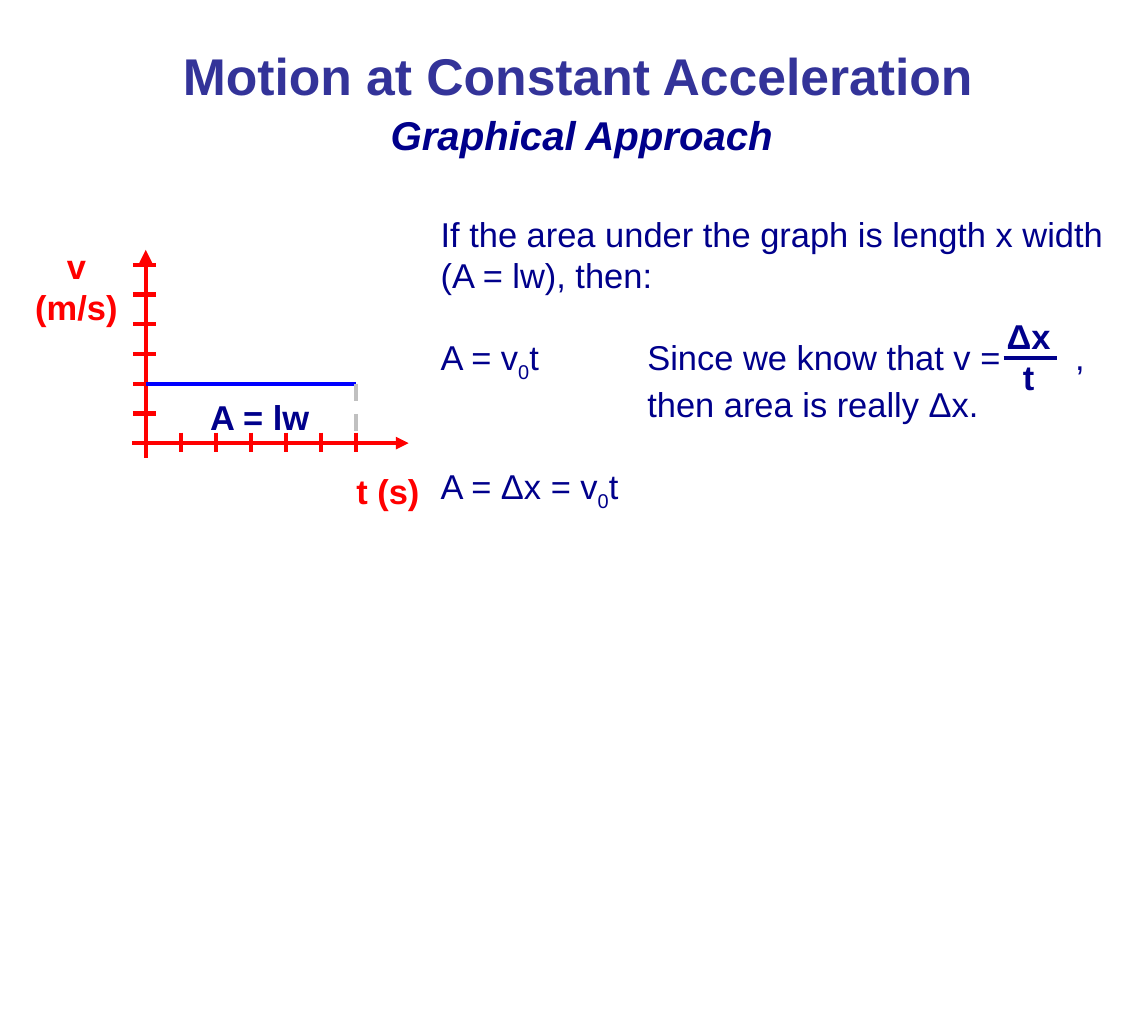
from lxml.etree import SubElement
from pptx import Presentation
from pptx.dml.color import RGBColor
from pptx.enum.dml import MSO_LINE
from pptx.enum.shapes import MSO_CONNECTOR
from pptx.enum.text import PP_ALIGN
from pptx.oxml.ns import qn
from pptx.util import Inches, Pt

INDIGO = RGBColor(0x33, 0x33, 0x99)
NAVY = RGBColor(0x00, 0x00, 0x8B)
RED = RGBColor(0xFF, 0x00, 0x00)
BLUE = RGBColor(0x00, 0x00, 0xFF)
SILVER = RGBColor(0xC0, 0xC0, 0xC0)

WIDTH, HEIGHT = Inches(11.11), Inches(10)
BLANK_LINE = 28.5


def area(left, top, width, height):
    """Turn hundredths of the slide's size into a box."""
    return (left * WIDTH / 100, top * HEIGHT / 100,
            width * WIDTH / 100, height * HEIGHT / 100)


def add_text(slide, box, *lines, size=24, color=NAVY, bold=False, italic=False,
             align=PP_ALIGN.LEFT, wrap=True, tabs=(), gaps=()):
    """Write one paragraph a line; underscores enclose a subscript.

    A line whose index is in gaps has an empty line's space above it.
    """
    frame = slide.shapes.add_textbox(*map(round, box)).text_frame
    frame.word_wrap = wrap
    for index, line in enumerate(lines):
        paragraph = frame.add_paragraph() if index else frame.paragraphs[0]
        paragraph.alignment = align
        if index in gaps:
            paragraph.space_before = Pt(BLANK_LINE)
        if tabs:
            stops = SubElement(paragraph._p.get_or_add_pPr(), qn("a:tabLst"))
            for stop in tabs:
                SubElement(stops, qn("a:tab"), pos=str(stop), algn="l")
        for part, words in enumerate(line.split("_")):
            run = paragraph.add_run()
            run.text = words
            font = run.font
            font.name, font.size = "Arial", Pt(size)
            font.bold, font.italic = bold, italic
            font.color.rgb = color
            if part % 2:
                run._r.get_or_add_rPr().set("baseline", "-25000")


def add_line(slide, start, end, color, dash=None, arrow=False):
    line = slide.shapes.add_connector(
        MSO_CONNECTOR.STRAIGHT, *map(round, (*start, *end)))
    line.line.color.rgb = color
    line.line.width = Pt(3)
    if dash:
        line.line.dash_style = dash
    if arrow:
        SubElement(line.line._get_or_add_ln(), qn("a:tailEnd"), type="triangle")
    SubElement(line._element.spPr, qn("a:effectLst"))


def add_heading(slide, box):
    left, top, width, height = box
    add_text(slide, (left, top, width, height * 0.6),
             "Motion at Constant Acceleration",
             size=36, color=INDIGO, bold=True, align=PP_ALIGN.CENTER)
    add_text(slide, (left + width * 0.28, top + height * 0.53, width * 0.5, height * 0.47),
             "Graphical Approach", size=28, bold=True, italic=True)


def add_velocity_graph(slide, box):
    """Draw the axes in the box, 7.5 time units wide and 6.5 velocity units high."""
    left, top, width, height = box
    column, row = width / 7.5, height / 6.5
    ticks, velocity, duration = 6, 2, 6

    def point(time, speed):
        return left + time * column, top + height - speed * row

    def label(time, speed, columns, rows, *lines, color):
        add_text(slide, (*point(time, speed), columns * column, rows * row), *lines,
                 color=color, bold=True, align=PP_ALIGN.CENTER)

    add_line(slide, point(0, -0.5), point(0, 6.5), RED, arrow=True)
    add_line(slide, point(-0.4, 0), point(7.5, 0), RED, arrow=True)
    for tick in range(1, ticks + 1):
        add_line(slide, point(tick, 0.35), point(tick, -0.3), RED)
        add_line(slide, point(-0.37, tick), point(0.3, tick), RED)
    label(-3.5, 6.84, 3.04, 3.16, "v", "(m/s)", color=RED)
    label(5.52, -0.73, 2.77, 1.74, "t (s)", color=RED)

    add_line(slide, point(0, velocity), point(duration, velocity), BLUE)
    add_line(slide, point(duration, velocity), point(duration, 0), SILVER,
             dash=MSO_LINE.DASH)
    label(1.45, 1.74, 3.6, 1.74, "A = lw", color=NAVY)


def add_derivation(slide, box):
    left, top, width, height = box
    add_text(slide, box,
             "If the area under the graph is length x width",
             "(A = lw), then:",
             "A = v_0_t\tSince we know that v =\t,",
             "\tthen area is really Δx.",
             "A = Δx = v_0_t",
             tabs=(Inches(2), Inches(6.14)), gaps=(2, 4))
    add_text(slide, (left + width * 0.77, top + height * 0.265, width * 0.13, height * 0.24),
             "Δx", "t", bold=True, align=PP_ALIGN.CENTER)
    bar = top + height * 0.39
    add_line(slide, (left + width * 0.8, bar), (left + width * 0.875, bar), NAVY)


def main():
    deck = Presentation()
    deck.slide_width, deck.slide_height = WIDTH, HEIGHT
    slide = deck.slides.add_slide(deck.slide_layouts[6])
    add_heading(slide, area(11.25, 3.8, 78.2, 12))
    add_velocity_graph(slide, area(12.7, 24.2, 22.9, 18.7))
    add_derivation(slide, area(37.5, 20.1, 62.4, 37.4))
    deck.save("out.pptx")


if __name__ == "__main__":
    main()
